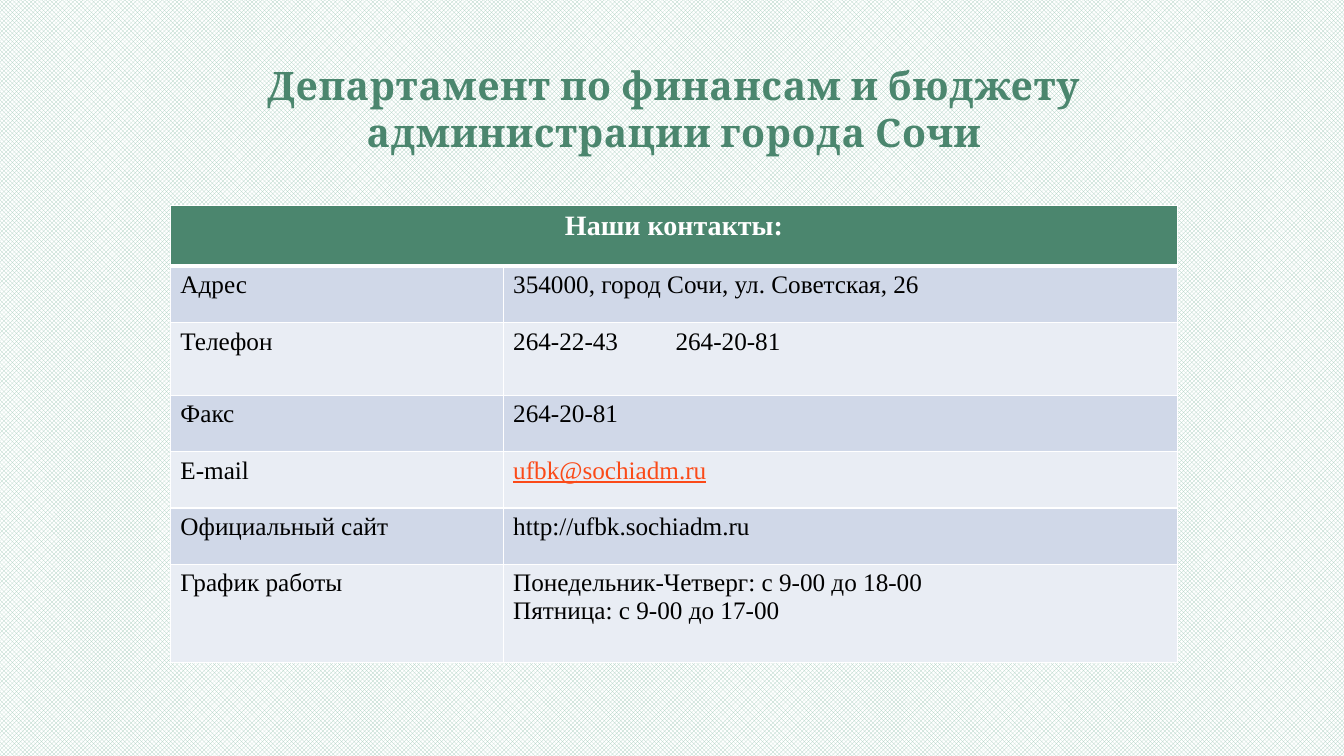
from lxml import etree
from pptx import Presentation
from pptx.dml.color import RGBColor
from pptx.enum.dml import MSO_PATTERN
from pptx.enum.text import MSO_ANCHOR, MSO_AUTO_SIZE, PP_ALIGN
from pptx.oxml.ns import qn
from pptx.util import Inches, Pt

TRELLIS = MSO_PATTERN.TRELLIS
CENTER, LEFT = PP_ALIGN.CENTER, PP_ALIGN.LEFT
MIDDLE = MSO_ANCHOR.MIDDLE
GROW = MSO_AUTO_SIZE.SHAPE_TO_FIT_TEXT

TITLE = "Департамент по финансам и бюджету администрации города Сочи"
HEADING = "Наши контакты:"
EMAIL = "ufbk@sochiadm.ru"
CONTACTS = [
    ("Адрес", ["354000, город Сочи, ул. Советская, 26"]),
    ("Телефон", ["264-22-43\t264-20-81"]),
    ("Факс", ["264-20-81"]),
    ("Е-mail", [EMAIL]),
    ("Официальный сайт", ["http://ufbk.sochiadm.ru"]),
    ("График работы", ["Понедельник-Четверг: с 9-00 до 18-00",
                       "Пятница: с 9-00 до 17-00"]),
]
COLORS = {
    "green": "4B866E", "pattern": "A6CDBD", "white": "FFFFFF", "black": "000000",
    "band_dark": "D0D8E8", "band_light": "E9EDF4", "email": "FB4A18",
}
TITLE_FONT, TABLE_FONT = "Cambria", "Times New Roman"
LEFT_EDGE, TITLE_TOP, TITLE_HEIGHT, TABLE_TOP = 1.69, 0.55, 1.04, 2.04
COLUMN_WIDTHS = [3.3, 6.69]
ROW_HEIGHTS = [0.6, 0.56, 0.72, 0.56, 0.56, 0.56, 0.97]
WIDTH = sum(COLUMN_WIDTHS)
PHONE_TAB = 1.61


def color(name):
    return RGBColor.from_string(COLORS[name])


def add_span(para, text, font, size, color_name, bold=False):
    span = para.add_run()
    span.text = text
    span.font.name = font
    span.font.size = Pt(size)
    span.font.bold = bold
    span.font.color.rgb = color(color_name)
    return span


def add_tab_stop(para, position):
    tabs = etree.SubElement(para._p.get_or_add_pPr(), qn("a:tabLst"))
    etree.SubElement(tabs, qn("a:tab"), pos=str(Inches(position)), algn="l")


def style_cell(cell, fill_name, top=1, bottom=1):
    """Give a cell white borders (widths in points) and a solid fill."""
    properties = cell._tc.get_or_add_tcPr()
    for side, width in (("L", 1), ("R", 1), ("T", top), ("B", bottom)):
        line = etree.SubElement(properties, qn(f"a:ln{side}"), w=str(Pt(width)))
        solid = etree.SubElement(line, qn("a:solidFill"))
        etree.SubElement(solid, qn("a:srgbClr"), val=COLORS["white"])
    cell.fill.solid()
    cell.fill.fore_color.rgb = color(fill_name)


def write_lines(cell, lines):
    frame = cell.text_frame
    for index, text in enumerate(lines):
        para = frame.add_paragraph() if index else frame.paragraphs[0]
        para.alignment = LEFT
        if "\t" in text:
            add_tab_stop(para, PHONE_TAB)
        is_email = text == EMAIL
        span = add_span(para, text, TABLE_FONT, 18, "email" if is_email else "black")
        span.font.underline = is_email


def add_title(page):
    box = page.shapes.title
    box.left, box.top = Inches(LEFT_EDGE), Inches(TITLE_TOP)
    box.width, box.height = Inches(WIDTH), Inches(TITLE_HEIGHT)
    frame = box.text_frame
    frame.word_wrap = True
    frame.auto_size = GROW
    frame.vertical_anchor = MIDDLE
    para = frame.paragraphs[0]
    para.alignment = CENTER
    span = add_span(para, TITLE, TITLE_FONT, 28, "green", bold=True)
    span.font._element.set("spc", "50")


def add_contacts(page):
    table = page.shapes.add_table(
        len(ROW_HEIGHTS), len(COLUMN_WIDTHS), Inches(LEFT_EDGE), Inches(TABLE_TOP),
        Inches(WIDTH), Inches(sum(ROW_HEIGHTS))).table
    table.horz_banding = False
    for column, width in zip(table.columns, COLUMN_WIDTHS):
        column.width = Inches(width)
    for row, height in zip(table.rows, ROW_HEIGHTS):
        row.height = Inches(height)

    heading = table.cell(0, 0)
    heading.merge(table.cell(0, 1))
    for cell in table.rows[0].cells:
        style_cell(cell, "green", bottom=3)
    para = heading.text_frame.paragraphs[0]
    para.alignment = CENTER
    add_span(para, HEADING, TABLE_FONT, 20, "white", bold=True)

    for number, (label, values) in enumerate(CONTACTS, start=1):
        band = "band_dark" if number % 2 else "band_light"
        for column, lines in enumerate(([label], values)):
            cell = table.cell(number, column)
            style_cell(cell, band, top=3 if number == 1 else 1)
            write_lines(cell, lines)


def main():
    deck = Presentation()
    deck.slide_width, deck.slide_height = Inches(13.33), Inches(7.5)
    page = deck.slides.add_slide(deck.slide_layouts[5])
    backdrop = page.background.fill
    backdrop.patterned()
    backdrop.pattern = TRELLIS
    backdrop.fore_color.rgb = color("pattern")
    backdrop.back_color.rgb = color("white")
    add_contacts(page)
    add_title(page)
    deck.save("out.pptx")


if __name__ == "__main__":
    main()
